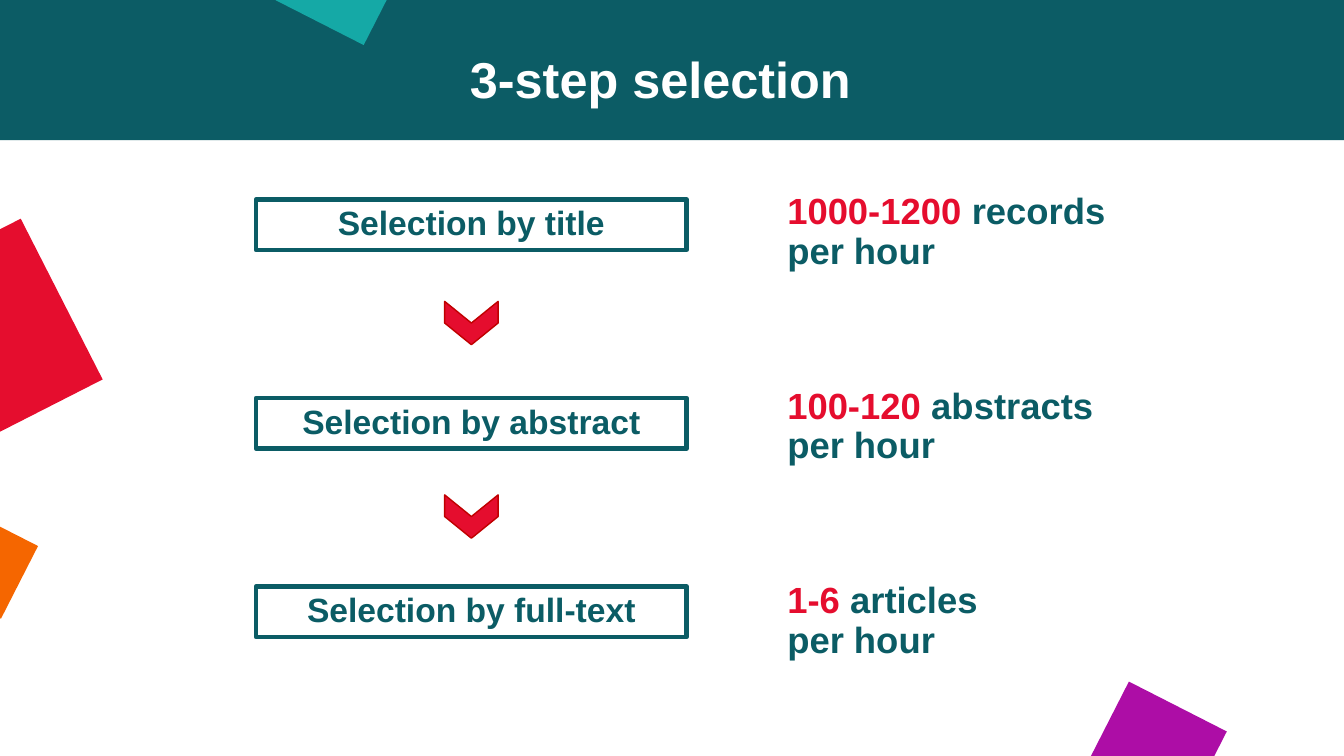
from pptx import Presentation
from pptx.dml.color import RGBColor
from pptx.enum.shapes import MSO_SHAPE
from pptx.enum.text import MSO_ANCHOR, MSO_AUTO_SIZE, PP_ALIGN
from pptx.util import Inches, Pt

RECT, CHEVRON = MSO_SHAPE.RECTANGLE, MSO_SHAPE.CHEVRON
TOP, MIDDLE = MSO_ANCHOR.TOP, MSO_ANCHOR.MIDDLE
CENTER, LEFT = PP_ALIGN.CENTER, PP_ALIGN.LEFT
NO_FIT = MSO_AUTO_SIZE.NONE

WHITE = RGBColor(0xFF, 0xFF, 0xFF)
BAND = RGBColor(0x0C, 0x5C, 0x65)
PETROL = RGBColor(0x0B, 0x5C, 0x65)
RED = RGBColor(0xE5, 0x0D, 0x2E)
DARK_RED = RGBColor(0xC0, 0x00, 0x00)
PURPLE = RGBColor(0xAD, 0x0D, 0xA6)
ORANGE = RGBColor(0xF5, 0x66, 0x00)
TEAL = RGBColor(0x15, 0xA9, 0xA6)

prs = Presentation()
prs.slide_width, prs.slide_height = Inches(13.33), Inches(7.5)
slide = prs.slides.add_slide(prs.slide_layouts[5])


def add_block(kind, box, fill, rotation=0, line=None, width=0):
    sp = slide.shapes.add_shape(kind, *[Inches(v) for v in box])
    sp.shadow.inherit = False
    sp.rotation = rotation
    sp.fill.solid()
    sp.fill.fore_color.rgb = fill
    if line is None:
        sp.line.fill.background()
    else:
        sp.line.color.rgb = line
        sp.line.width = Pt(width)
    return sp


def write(sp, lines, size, align, anchor):
    tf = sp.text_frame
    tf.word_wrap = True
    tf.auto_size = NO_FIT
    tf.vertical_anchor = anchor
    p = tf.paragraphs[0]
    p.alignment = align
    p.line_spacing = 0.9
    p.space_before = Pt(0)
    for i, runs in enumerate(lines):
        if i:
            p.add_line_break()
        for text, color in runs:
            r = p.add_run()
            r.text = text
            r.font.name = "Arial"
            r.font.size = Pt(size)
            r.font.bold = True
            r.font.color.rgb = color


for box, fill, rotation in [
    ((0, 0, 13.33, 1.39), BAND, 0),
    ((-1.09, 2.48, 1.8, 1.79), RED, 333),
    ((10.89, 6.95, 1.09, 1.09), PURPLE, 27),
    ((-0.61, 5.18, 0.85, 0.81), ORANGE, 27),
    ((2.91, -0.73, 0.98, 1.01), TEAL, 27),
]:
    add_block(RECT, box, fill, rotation)

steps = [
    ("Selection by title", 1.98, "1000-1200 ", "records"),
    ("Selection by abstract", 3.95, "100-120 ", "abstracts"),
    ("Selection by full-text", 5.82, "1-6 ", "articles"),
]
for i, (step, top, rate, unit) in enumerate(steps):
    sp = add_block(RECT, (2.54, top, 4.27, 0.5), WHITE, 0, PETROL, 3.25)
    write(sp, [[(step, PETROL)]], 24, CENTER, MIDDLE)
    tb = slide.shapes.add_textbox(Inches(7.71), Inches(1.87 + 1.93 * i), Inches(3.51), Inches(1.29))
    write(tb, [[(rate, RED), (unit, PETROL)], [("per hour", PETROL)]], 26, LEFT, TOP)

for top in (2.94, 4.86):
    add_block(CHEVRON, (4.46, top, 0.43, 0.53), RED, 90, DARK_RED, 1)

title = slide.shapes.title
title.left, title.top = Inches(2.36), Inches(0.5)
title.width, title.height = Inches(8.38), Inches(0.7)
write(title, [[("3-step selection", WHITE)]], 36, CENTER, TOP)
slide.shapes._spTree.append(title._element)

prs.save("out.pptx")
